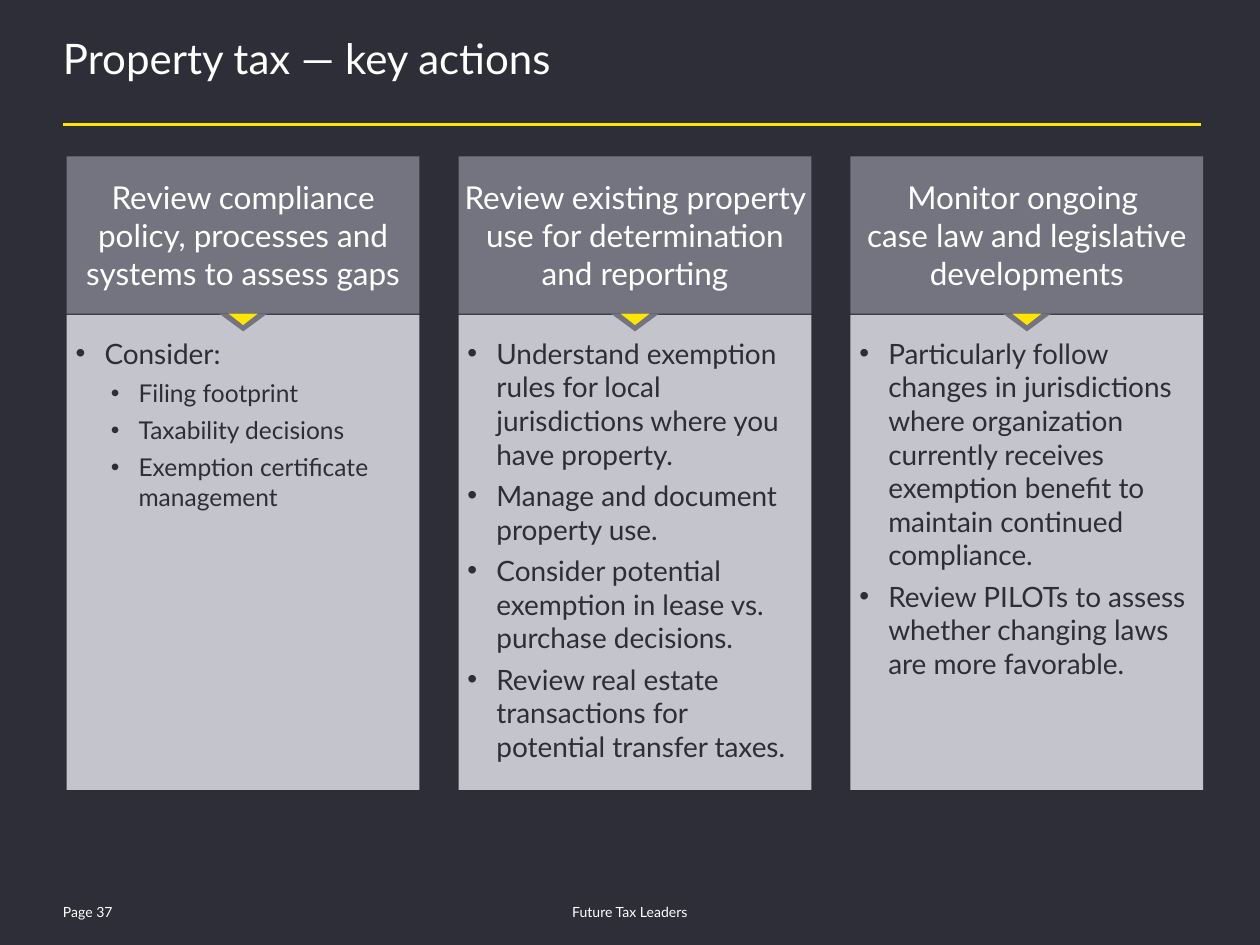
from dataclasses import dataclass

from lxml import etree
from pptx import Presentation
from pptx.dml.color import RGBColor
from pptx.enum.shapes import MSO_CONNECTOR, MSO_SHAPE
from pptx.enum.text import MSO_ANCHOR, PP_ALIGN
from pptx.oxml.ns import qn
from pptx.util import Inches, Pt

RECTANGLE, TRIANGLE = MSO_SHAPE.RECTANGLE, MSO_SHAPE.ISOSCELES_TRIANGLE
STRAIGHT = MSO_CONNECTOR.STRAIGHT
LEFT, CENTER = PP_ALIGN.LEFT, PP_ALIGN.CENTER
TOP, MIDDLE = MSO_ANCHOR.TOP, MSO_ANCHOR.MIDDLE


@dataclass(frozen=True)
class Theme:
    font: str = "Lato"
    dark: str = "2E2E38"
    white: str = "FFFFFF"
    yellow: str = "FFE600"
    header: str = "747480"
    panel: str = "C4C4CD"
    title_size: float = 24
    header_size: float = 18
    bullet_sizes: tuple = (16, 14)
    footer_size: float = 8


THEME = Theme()

COLUMN_LEFT, COLUMN_STEP, COLUMN_WIDTH = 0.53, 3.11, 2.8
HEADER_TOP, HEADER_HEIGHT = 1.24, 1.25
PANEL_TOP, PANEL_HEIGHT = 2.5, 3.77
BULLET_INDENTS = ((0.23, 0.23), (0.5, 0.22))  # text indent, hanging part

# Each action: heading, then (level, text) points
ACTIONS = [
    ("Review compliance policy, processes and systems to assess gaps", [
        (0, "Consider:"),
        (1, "Filing footprint"),
        (1, "Taxability decisions"),
        (1, "Exemption certificate management"),
    ]),
    ("Review existing property use for determination and reporting", [
        (0, "Understand exemption rules for local jurisdictions where you have property."),
        (0, "Manage and document property use."),
        (0, "Consider potential exemption in lease vs. purchase decisions."),
        (0, "Review real estate transactions for potential transfer taxes."),
    ]),
    ("Monitor ongoing \ncase law and legislative developments", [
        (0, "Particularly follow changes in jurisdictions where organization currently "
            "receives exemption benefit to maintain continued compliance."),
        (0, "Review PILOTs to assess whether changing laws are more favorable."),
    ]),
]


def rgb(value):
    return RGBColor.from_string(value)


def set_frame(frame, insets, anchor=TOP):
    """Wrap the text and set its left, top, right and bottom insets."""
    frame.word_wrap = True
    frame.vertical_anchor = anchor
    (frame.margin_left, frame.margin_top,
     frame.margin_right, frame.margin_bottom) = map(Inches, insets)


def write_text(paragraph, text, size, color, align=LEFT, space_after=0, line_spacing=None):
    paragraph.text = text
    paragraph.alignment = align
    paragraph.space_after = Pt(space_after)
    if line_spacing:
        paragraph.line_spacing = line_spacing
    for run in paragraph.runs:
        run.font.name = THEME.font
        run.font.size = Pt(size)
        run.font.color.rgb = rgb(color)


def add_bullet(paragraph, level):
    paragraph.level = level
    indent, hanging = BULLET_INDENTS[level]
    properties = paragraph._p.get_or_add_pPr()
    properties.set("marL", str(Inches(indent)))
    properties.set("indent", str(-Inches(hanging)))
    color = etree.SubElement(properties, qn("a:buClr"))
    etree.SubElement(color, qn("a:srgbClr"), val=THEME.dark)
    etree.SubElement(properties, qn("a:buFont"), typeface="Arial")
    etree.SubElement(properties, qn("a:buChar"), char="•")


def add_label(slide, box, text, insets, **text_format):
    label = slide.shapes.add_textbox(*map(Inches, box))
    set_frame(label.text_frame, insets)
    write_text(label.text_frame.paragraphs[0], text, color=THEME.white, **text_format)


def add_block(slide, kind, box, color):
    block = slide.shapes.add_shape(kind, *map(Inches, box))
    block.shadow.inherit = False
    block.fill.solid()
    block.fill.fore_color.rgb = rgb(color)
    block.line.fill.background()
    return block


def add_title_rule(slide):
    rule = slide.shapes.add_connector(
        STRAIGHT, Inches(0.5), Inches(0.99), Inches(9.53), Inches(0.99))
    rule.line.color.rgb = rgb(THEME.yellow)
    rule.line.width = Pt(1.5)
    etree.SubElement(rule._element.spPr, qn("a:effectLst"))


def add_panel(slide, left, points):
    panel = add_block(slide, RECTANGLE, (left, PANEL_TOP, COLUMN_WIDTH, PANEL_HEIGHT), THEME.panel)
    frame = panel.text_frame
    set_frame(frame, (0.07, 0.17, 0.07, 0.04))
    for index, (level, text) in enumerate(points):
        paragraph = frame.add_paragraph() if index else frame.paragraphs[0]
        add_bullet(paragraph, level)
        write_text(paragraph, text, THEME.bullet_sizes[level], THEME.dark, space_after=4.5)


def add_header(slide, left, heading):
    header = add_block(
        slide, RECTANGLE, (left, HEADER_TOP, COLUMN_WIDTH, HEADER_HEIGHT), THEME.header)
    set_frame(header.text_frame, (0.04,) * 4, MIDDLE)
    write_text(header.text_frame.paragraphs[0], heading, THEME.header_size, THEME.white,
               align=CENTER, space_after=3.4)


def add_pointer(slide, center):
    """Draw the two nested triangles that point down from a header."""
    for width, height, color in ((0.38, 0.14, THEME.header), (0.23, 0.09, THEME.yellow)):
        box = (center - width / 2, HEADER_TOP + HEADER_HEIGHT, width, height)
        add_block(slide, TRIANGLE, box, color).rotation = 180


def main():
    presentation = Presentation()
    presentation.slide_width, presentation.slide_height = Inches(10), Inches(7.5)
    slide = presentation.slides.add_slide(presentation.slide_layouts[6])
    slide.background.fill.solid()
    slide.background.fill.fore_color.rgb = rgb(THEME.dark)

    footer_insets = (0, 0.04, 0, 0)
    add_label(slide, (0.5, 7.13, 0.73, 0.2), "Page 37", footer_insets, size=THEME.footer_size)
    add_label(slide, (3.08, 7.13, 3.84, 0.2), "Future Tax Leaders", footer_insets,
              size=THEME.footer_size, align=CENTER)
    add_title_rule(slide)
    add_label(slide, (0.5, 0.32, 9, 0.65), "Property tax — key actions", (0,) * 4,
              size=THEME.title_size, line_spacing=0.85)

    for column, (heading, points) in enumerate(ACTIONS):
        left = COLUMN_LEFT + column * COLUMN_STEP
        add_panel(slide, left, points)
        add_header(slide, left, heading)
        add_pointer(slide, left + COLUMN_WIDTH / 2)

    presentation.save("out.pptx")


if __name__ == "__main__":
    main()
